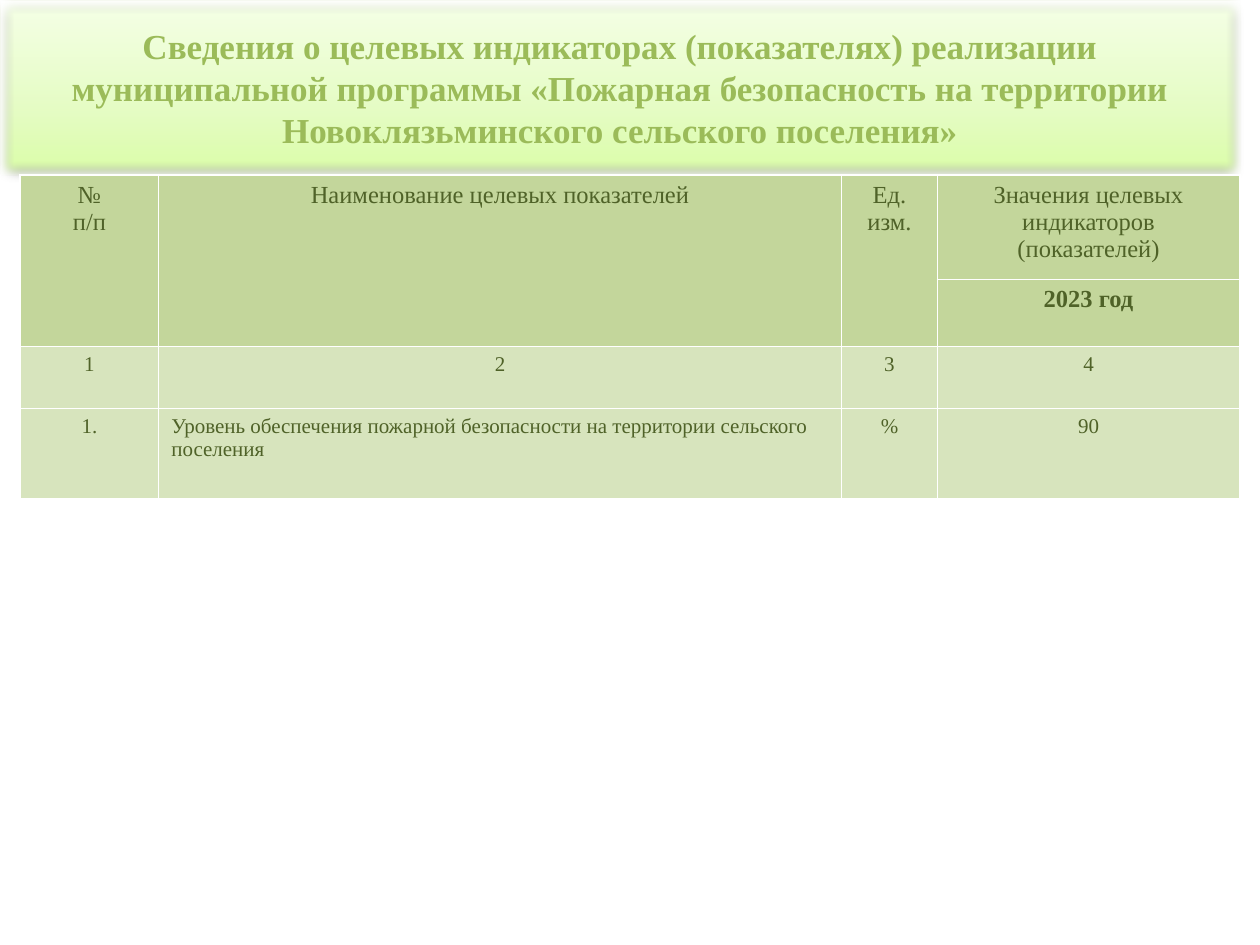
from dataclasses import dataclass

from lxml import etree
from pptx import Presentation
from pptx.dml.color import RGBColor
from pptx.enum import text
from pptx.oxml import parse_xml
from pptx.oxml.ns import nsdecls
from pptx.util import Inches, Pt


@dataclass(frozen=True)
class Theme:
    font: str = "Times New Roman"
    title_size: int = 20
    header_size: int = 14
    body_size: int = 12
    title_color: str = "9BBB59"
    title_line: str = "98B955"
    title_gradient: tuple = ((0, "DAFDA7"), (35, "E4FCC2"), (100, "F5FFE7"))
    text_color: str = "4F6228"
    header_fill: str = "C3D69B"
    body_fill: str = "D7E4BD"
    border: str = "FFFFFF"


THEME = Theme()
TITLE = ("Сведения о целевых индикаторах (показателях) реализации муниципальной "
         "программы «Пожарная безопасность на территории Новоклязьминского "
         "сельского поселения»")
COLUMN_WIDTHS = (1.1, 5.42, 0.76, 2.4)
ROW_HEIGHTS = (0.83, 0.53, 0.49, 0.72)
HEADER_ROWS = 2
NAME_COLUMN = 1
ROWS = (
    ("№\nп/п", "Наименование целевых показателей", "Ед. изм.",
     "Значения целевых индикаторов (показателей)"),
    ("", "", "", "2023 год"),
    ("1", "2", "3", "4"),
    ("1.", "Уровень обеспечения пожарной безопасности на территории сельского поселения",
     "%", "90"),
)


def style_paragraph(paragraph, size, color, bold=False, align=text.PP_ALIGN.CENTER):
    paragraph.alignment = align
    font = paragraph.font
    font.name, font.size, font.bold = THEME.font, Pt(size), bold
    font.color.rgb = RGBColor.from_string(color)


def add_gradient(properties):
    stops = "".join(f'<a:gs pos="{position * 1000}"><a:srgbClr val="{color}"/></a:gs>'
                    for position, color in THEME.title_gradient)
    properties.append(parse_xml(
        f'<a:gradFill {nsdecls("a")} rotWithShape="1"><a:gsLst>{stops}</a:gsLst>'
        '<a:lin ang="16200000" scaled="1"/></a:gradFill>'))


def add_soft_shadow(properties):
    properties.append(parse_xml(
        f'<a:effectLst {nsdecls("a")}>'
        f'<a:outerShdw blurRad="{Pt(3.1)}" dist="{Pt(1.6)}" dir="5400000" rotWithShape="0">'
        '<a:srgbClr val="000000"><a:alpha val="38000"/></a:srgbClr></a:outerShdw>'
        f'<a:softEdge rad="{Pt(5)}"/></a:effectLst>'))


def add_title(slide):
    title = slide.shapes.title
    title.left, title.top = Inches(0), Inches(0)
    title.width, title.height = Inches(9.84), Inches(1.39)
    properties = title.element.spPr
    add_gradient(properties)
    title.line.color.rgb = RGBColor.from_string(THEME.title_line)
    title.line.width = Pt(0.75)
    add_soft_shadow(properties)
    frame = title.text_frame
    frame.text = TITLE
    frame.word_wrap = True
    frame.auto_size = text.MSO_AUTO_SIZE.NONE
    frame.vertical_anchor = text.MSO_ANCHOR.MIDDLE
    style_paragraph(frame.paragraphs[0], THEME.title_size, THEME.title_color, bold=True)


def add_borders(cell):
    properties = cell._tc.get_or_add_tcPr()
    for index, side in enumerate(("lnL", "lnR", "lnT", "lnB")):
        properties.insert(index, parse_xml(
            f'<a:{side} {nsdecls("a")} w="{Pt(1)}"><a:solidFill>'
            f'<a:srgbClr val="{THEME.border}"/></a:solidFill></a:{side}>'))


def fill_cell(cell, value, row, column):
    header = row < HEADER_ROWS
    cell.fill.solid()
    cell.fill.fore_color.rgb = RGBColor.from_string(
        THEME.header_fill if header else THEME.body_fill)
    add_borders(cell)
    cell.text = value
    left = not header and row == len(ROWS) - 1 and column == NAME_COLUMN
    for paragraph in cell.text_frame.paragraphs:
        style_paragraph(paragraph, THEME.header_size if header else THEME.body_size,
                        THEME.text_color, bold=row == 1,
                        align=text.PP_ALIGN.LEFT if left else text.PP_ALIGN.CENTER)


def add_indicator_table(slide):
    table = slide.shapes.add_table(
        len(ROWS), len(COLUMN_WIDTHS), Inches(0.16), Inches(1.39),
        Inches(sum(COLUMN_WIDTHS)), Inches(sum(ROW_HEIGHTS))).table
    for column, width in zip(table.columns, COLUMN_WIDTHS):
        column.width = Inches(width)
    for row, height in zip(table.rows, ROW_HEIGHTS):
        row.height = Inches(height)
    for row, values in enumerate(ROWS):
        for column, value in enumerate(values):
            fill_cell(table.cell(row, column), value, row, column)
    for column in range(len(COLUMN_WIDTHS) - 1):
        table.cell(0, column).merge(table.cell(HEADER_ROWS - 1, column))


def main():
    presentation = Presentation()
    presentation.slide_width, presentation.slide_height = Inches(10), Inches(7.5)
    slide = presentation.slides.add_slide(presentation.slide_layouts[5])
    add_title(slide)
    add_indicator_table(slide)
    presentation.save("out.pptx")


if __name__ == "__main__":
    main()
